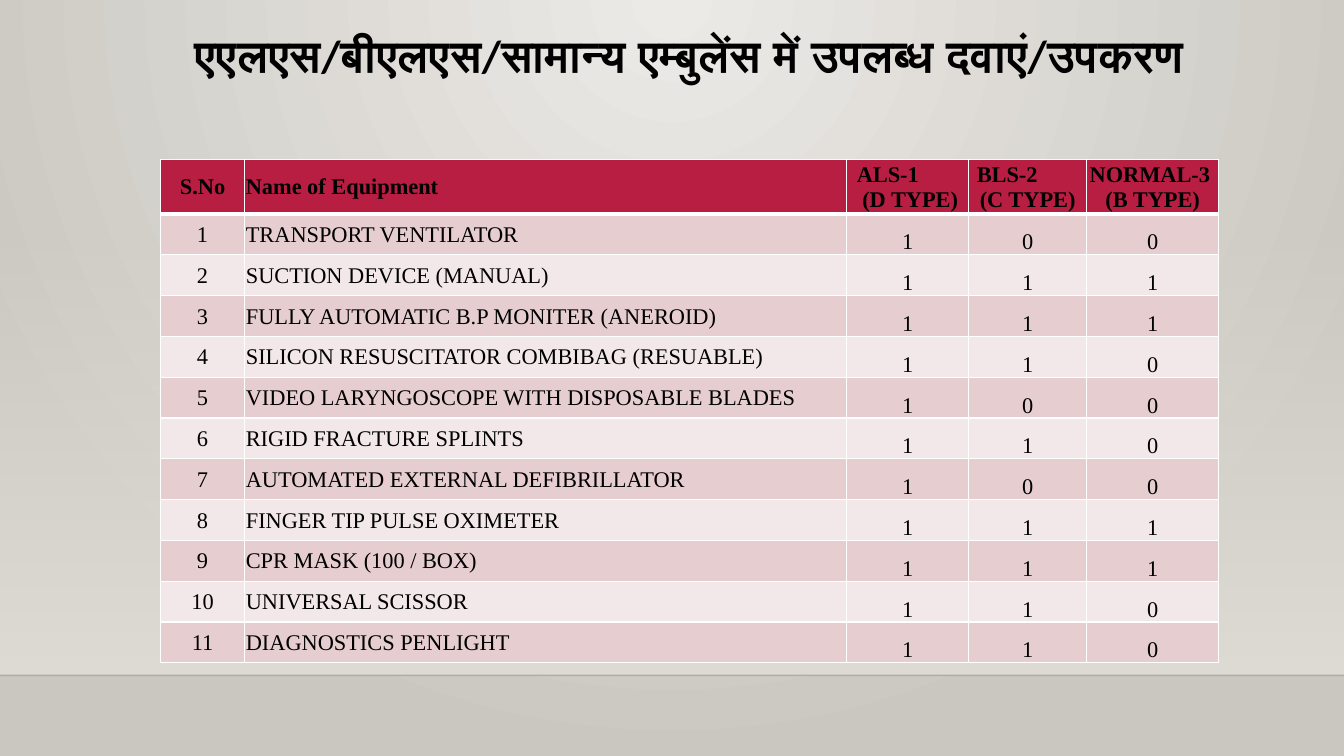
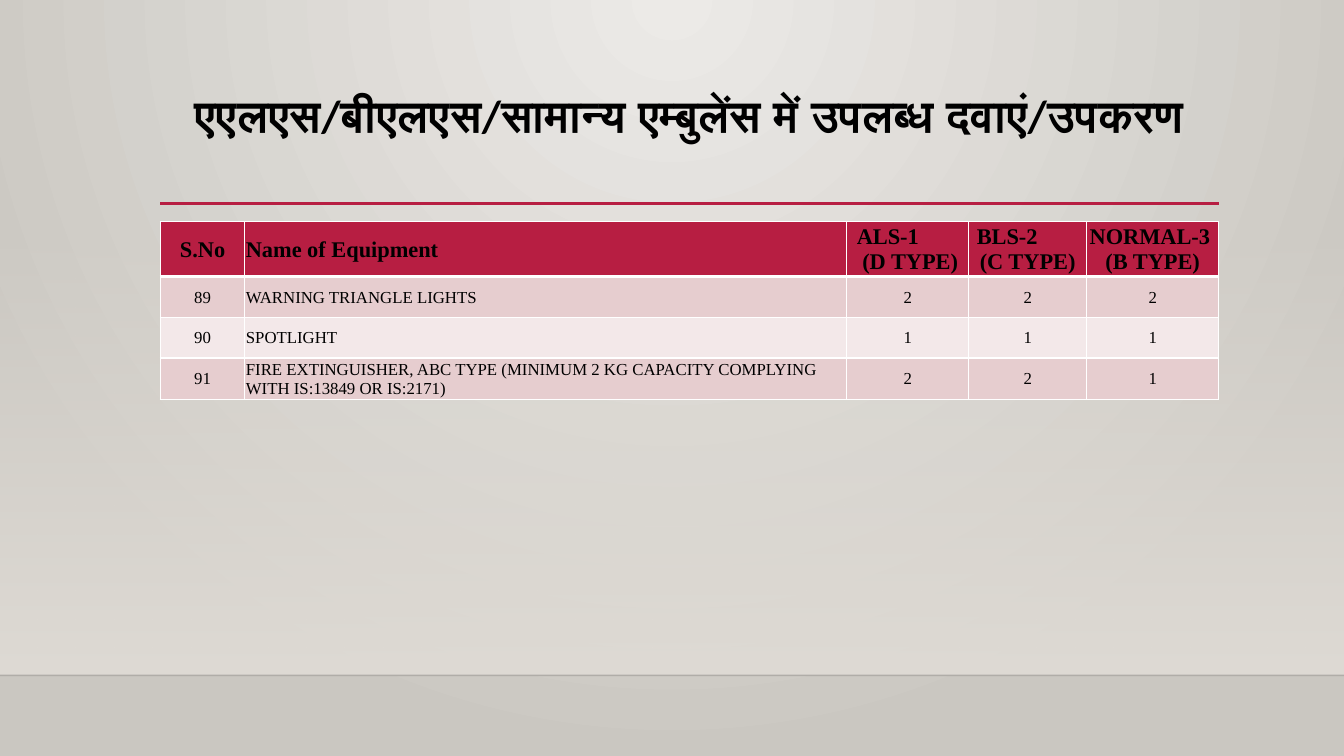
"""Build two slides listing the equipment carried by each type of ambulance."""

from dataclasses import dataclass
from typing import NamedTuple

from lxml.etree import SubElement
from pptx import Presentation
from pptx.dml.color import RGBColor
from pptx.dml.fill import FillFormat
from pptx.enum.shapes import MSO_CONNECTOR, MSO_SHAPE
from pptx.enum.text import MSO_ANCHOR, PP_ALIGN
from pptx.oxml.ns import qn
from pptx.slide import Slide
from pptx.table import _Cell
from pptx.text.text import _Paragraph
from pptx.util import Inches, Length, Pt

WIDE, HIGH = Inches(13.33), Inches(7.5)
TITLE = "एएलएस/बीएलएस/सामान्य एम्बुलेंस में उपलब्ध दवाएं/उपकरण"


@dataclass(frozen=True)
class Theme:
    glow: str = "ECEAE7"
    edge: str = "CAC7C1"
    wall: str = "DFDBD5"
    ink: str = "000000"
    red: str = "B71E42"
    dark: str = "E6CDCF"
    pale: str = "F3E8E9"
    white: str = "FFFFFF"
    head: str = "Calibri"
    body: str = "Times New Roman"
    large: int = 32
    label: int = 16
    small: int = 12


@dataclass(frozen=True)
class Grid:
    left: float = 11.92
    width: float = 78.75
    title: float = 15.33
    wall: float = 29.47
    floor: float = 89.33
    rule: float = 26.93
    head: float = 6.67
    row: float = 5.4
    cols: tuple[float, ...] = (6.3, 44.78, 9.08, 8.78, 9.83)


class Line(NamedTuple):
    text: str
    align: PP_ALIGN = PP_ALIGN.CENTER
    indent: float = 0


class Item(NamedTuple):
    number: int
    name: str
    counts: tuple[int, int, int]


class Page(NamedTuple):
    title: float
    table: float
    size: int
    anchor: MSO_ANCHOR
    items: list[Item]


THEME, GRID = Theme(), Grid()
LEFT = PP_ALIGN.LEFT

HEADS = [
    [Line("S.No")],
    [Line("Name of Equipment", LEFT)],
    [Line("ALS-1", LEFT, 0.09), Line("(D TYPE)", indent=0.05)],
    [Line("BLS-2", LEFT, 0.07), Line("(C TYPE)")],
    [Line("NORMAL-3", LEFT, 0.02), Line("(B TYPE)")],
]

PAGES = [
    Page(3.87, 21.07, THEME.label, MSO_ANCHOR.BOTTOM, [
        Item(1, "TRANSPORT VENTILATOR", (1, 0, 0)),
        Item(2, "SUCTION DEVICE (MANUAL)", (1, 1, 1)),
        Item(3, "FULLY AUTOMATIC B.P MONITER (ANEROID)", (1, 1, 1)),
        Item(4, "SILICON RESUSCITATOR COMBIBAG (RESUABLE)", (1, 1, 0)),
        Item(5, "VIDEO LARYNGOSCOPE WITH DISPOSABLE BLADES", (1, 0, 0)),
        Item(6, "RIGID FRACTURE SPLINTS", (1, 1, 0)),
        Item(7, "AUTOMATED EXTERNAL DEFIBRILLATOR", (1, 0, 0)),
        Item(8, "FINGER TIP PULSE OXIMETER", (1, 1, 1)),
        Item(9, "CPR MASK (100 / BOX)", (1, 1, 1)),
        Item(10, "UNIVERSAL SCISSOR", (1, 1, 0)),
        Item(11, "DIAGNOSTICS PENLIGHT", (1, 1, 0)),
    ]),
    Page(11.73, 29.33, THEME.small, MSO_ANCHOR.MIDDLE, [
        Item(89, "WARNING TRIANGLE LIGHTS", (2, 2, 2)),
        Item(90, "SPOTLIGHT", (1, 1, 1)),
        Item(91, "FIRE EXTINGUISHER, ABC TYPE (MINIMUM 2 KG CAPACITY "
                 "COMPLYING WITH IS:13849 OR IS:2171)", (2, 2, 1)),
    ]),
]


def across(share: float) -> Length:
    """Turn a percentage of the slide's width into a length."""
    return Length(round(WIDE * share / 100))


def down(share: float) -> Length:
    """Turn a percentage of the slide's height into a length."""
    return Length(round(HIGH * share / 100))


def blend(fill: FillFormat, first: str, last: str) -> None:
    """Give a fill two gradient colours, running downwards."""
    fill.gradient()
    fill.gradient_angle = 270
    for stop, color in zip(fill.gradient_stops, (first, last)):
        stop.color.rgb = RGBColor.from_string(color)


def fade(color, percent: int) -> None:
    """Set the opacity of a colour element."""
    SubElement(color, qn("a:alpha"), val=str(percent * 1000))


def style(para: _Paragraph, font: str, size: int, bold: bool) -> None:
    """Set the font of a paragraph."""
    para.font.name = font
    para.font.size = Pt(size)
    para.font.bold = bold
    para.font.color.rgb = RGBColor.from_string(THEME.ink)


def rule(slide: Slide, left: float, width: float, top: float,
         color: str, weight: float, opaque: int = 100) -> None:
    """Draw a horizontal line."""
    line = slide.shapes.add_connector(
        MSO_CONNECTOR.STRAIGHT, across(left), down(top),
        across(left + width), down(top))
    line.line.color.rgb = RGBColor.from_string(color)
    line.line.width = Pt(weight)
    props = line.element.spPr
    if opaque < 100:
        fade(next(props.iter(qn("a:srgbClr"))), opaque)
    SubElement(props, qn("a:effectLst"))


def scene(slide: Slide) -> None:
    """Draw the lit wall and the floor line."""
    blend(slide.background.fill, THEME.glow, THEME.edge)
    grad = next(slide.element.iter(qn("a:gradFill")))
    grad.remove(grad.find(qn("a:lin")))
    path = SubElement(grad, qn("a:path"), path="circle")
    SubElement(path, qn("a:fillToRect"), l="43000", t="0", r="43000", b="100000")
    wall = slide.shapes.add_shape(
        MSO_SHAPE.RECTANGLE, 0, down(GRID.wall), WIDE,
        down(GRID.floor - GRID.wall))
    wall.shadow.inherit = False
    wall.line.fill.background()
    blend(wall.fill, THEME.wall, THEME.wall)
    fade(next(wall.element.spPr.iter(qn("a:srgbClr"))), 0)
    rule(slide, 0, 100, GRID.floor, THEME.ink, 1, 20)


def heading(slide: Slide, top: float) -> None:
    """Write the slide title."""
    box = slide.shapes.add_textbox(
        across(GRID.left), down(top), across(GRID.width), down(GRID.title))
    box.text_frame.word_wrap = True
    para = box.text_frame.paragraphs[0]
    para.text = TITLE
    para.alignment = PP_ALIGN.CENTER
    para.line_spacing = 0.9
    style(para, THEME.head, THEME.large, True)


def border(cell: _Cell, top: int, bottom: int) -> None:
    """Give a cell white borders."""
    props = cell._tc.get_or_add_tcPr()
    for side, weight in (("L", 1), ("R", 1), ("T", top), ("B", bottom)):
        line = SubElement(props, qn(f"a:ln{side}"), w=str(Pt(weight)))
        fill = SubElement(line, qn("a:solidFill"))
        SubElement(fill, qn("a:srgbClr"), val=THEME.white)


def write(cell: _Cell, lines: list[Line], size: int, bold: bool,
          color: str, anchor: MSO_ANCHOR) -> None:
    """Fill a cell with colour and text."""
    cell.fill.solid()
    cell.fill.fore_color.rgb = RGBColor.from_string(color)
    cell.vertical_anchor = anchor
    cell.margin_left = cell.margin_right = cell.margin_top = Inches(0.01)
    cell.margin_bottom = 0
    frame = cell.text_frame
    for spot, line in enumerate(lines):
        para = frame.add_paragraph() if spot else frame.paragraphs[0]
        para.text = line.text
        para.alignment = line.align
        if line.indent:
            para._p.get_or_add_pPr().set("marL", str(Inches(line.indent)))
        style(para, THEME.body, size, bold)


def chart(slide: Slide, page: Page) -> None:
    """Draw the equipment table."""
    count = len(page.items)
    table = slide.shapes.add_table(
        count + 1, len(GRID.cols), across(GRID.left), down(page.table),
        across(GRID.width), down(GRID.head + count * GRID.row)).table
    table.first_row = table.horz_banding = False
    for col, share in zip(table.columns, GRID.cols):
        col.width = across(share)
    rows = [HEADS] + [
        [[Line(str(item.number))], [Line(item.name, LEFT)],
         *([Line(str(value))] for value in item.counts)]
        for item in page.items]
    for r, row in enumerate(rows):
        head = r == 0
        table.rows[r].height = down(GRID.head if head else GRID.row)
        color = THEME.red if head else THEME.dark if r % 2 else THEME.pale
        for c, lines in enumerate(row):
            cell = table.cell(r, c)
            border(cell, 3 if r == 1 else 1, 3 if head else 1)
            write(cell, lines, THEME.label if head else page.size, head, color,
                  MSO_ANCHOR.MIDDLE if head or c < 2 else page.anchor)


def main() -> None:
    """Build and save the presentation."""
    deck = Presentation()
    deck.slide_width, deck.slide_height = WIDE, HIGH
    for page in PAGES:
        slide = deck.slides.add_slide(deck.slide_layouts[6])
        scene(slide)
        if page.table > GRID.rule:
            rule(slide, GRID.left, GRID.width, GRID.rule, THEME.red, 2.5)
        heading(slide, page.title)
        chart(slide, page)
    deck.save("out.pptx")


if __name__ == "__main__":
    main()
